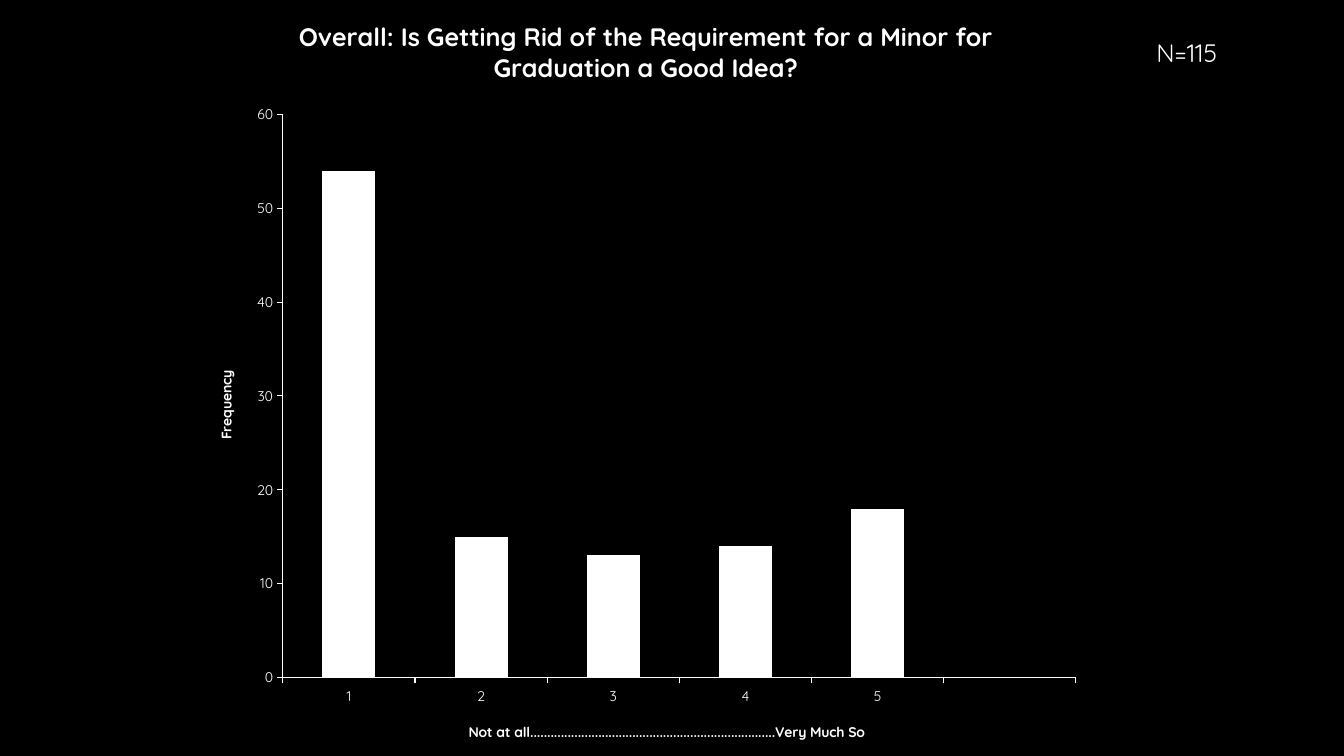
from dataclasses import dataclass

from lxml import etree
from pptx import Presentation
from pptx.chart.data import CategoryChartData
from pptx.dml.color import RGBColor
from pptx.enum.chart import XL_CHART_TYPE, XL_TICK_MARK
from pptx.enum.text import MSO_AUTO_SIZE
from pptx.oxml import parse_xml
from pptx.oxml.ns import nsdecls, qn
from pptx.util import Inches, Pt

COLUMNS = XL_CHART_TYPE.COLUMN_CLUSTERED
TICK_OUTSIDE, TICK_NONE = XL_TICK_MARK.OUTSIDE, XL_TICK_MARK.NONE
GROW_SHAPE = MSO_AUTO_SIZE.SHAPE_TO_FIT_TEXT


@dataclass(frozen=True)
class Theme:
    background: RGBColor = RGBColor(0x00, 0x00, 0x00)
    foreground: RGBColor = RGBColor(0xFF, 0xFF, 0xFF)
    font: str = "Quicksand"
    heading_size: int = 18
    label_size: int = 10


theme = Theme()


def write_text(text_frame, text, size=theme.label_size, bold=False):
    run = text_frame.paragraphs[0].add_run()
    run.text = text
    run.font.name = theme.font
    run.font.size = Pt(size)
    run.font.bold = bold
    run.font.color.rgb = theme.foreground


presentation = Presentation()
presentation.slide_width, presentation.slide_height = Inches(13.33), Inches(7.5)
slide = presentation.slides.add_slide(presentation.slide_layouts[6])
slide.background.fill.solid()
slide.background.fill.fore_color.rgb = theme.background

# Column chart of the answers
answers = CategoryChartData()
answers.categories = ["1", "2", "3", "4", "5", ""]
answers.add_series("Series 1", [54, 15, 13, 14, 18, None])
chart = slide.shapes.add_chart(
    COLUMNS, Inches(1.95), Inches(-0.07), Inches(8.91), Inches(7.64), answers
).chart
chart.has_legend = False
chart.font.name = theme.font
chart.font.size = Pt(theme.label_size)
chart.font.color.rgb = theme.foreground
write_text(
    chart.chart_title.text_frame,
    "Overall: Is Getting Rid of the Requirement for a Minor for Graduation a Good Idea?",
    size=theme.heading_size,
    bold=True,
)
chart.chart_title.include_in_layout = False

plot = chart.plots[0]
plot.gap_width = 150
plot.vary_by_categories = False
columns = plot.series[0]
columns.format.fill.solid()
columns.format.fill.fore_color.rgb = theme.foreground

axis_titles = (
    (chart.category_axis, "Not at all" + "." * 72 + "Very Much So"),
    (chart.value_axis, "Frequency"),
)
for axis, title in axis_titles:
    write_text(axis.axis_title.text_frame, title, bold=True)
    axis.has_major_gridlines = False
    axis.major_tick_mark = TICK_OUTSIDE
    axis.minor_tick_mark = TICK_NONE
    axis.format.line.color.rgb = theme.foreground
    axis.format.line.width = Pt(0.75)
chart.value_axis.minimum_scale = 0
chart.value_axis.maximum_scale = 60
chart.value_axis.major_unit = 10
frequency_body = chart.value_axis.axis_title.text_frame._txBody.find(qn("a:bodyPr"))
frequency_body.set("rot", "-5400000")
frequency_body.set("vert", "horz")

# Inner plot area as shares of the chart's size
plot_area = chart._chartSpace.chart.plotArea
for automatic_layout in plot_area.findall(qn("c:layout")):
    plot_area.remove(automatic_layout)
layout = parse_xml(f"<c:layout {nsdecls('c')}><c:manualLayout/></c:layout>")
settings = {
    "layoutTarget": "inner", "xMode": "edge", "yMode": "edge",
    "x": 0.096, "y": 0.158, "w": 0.883, "h": 0.731,
}
for name, value in settings.items():
    etree.SubElement(layout[0], qn(f"c:{name}")).set("val", str(value))
plot_area.insert(0, layout)

# Sample size
sample_size = slide.shapes.add_textbox(
    Inches(11.37), Inches(0.32), Inches(0.96), Inches(0.4)
).text_frame
sample_size.word_wrap = False
sample_size.auto_size = GROW_SHAPE
write_text(sample_size, "N=115", size=theme.heading_size)

presentation.save("out.pptx")
